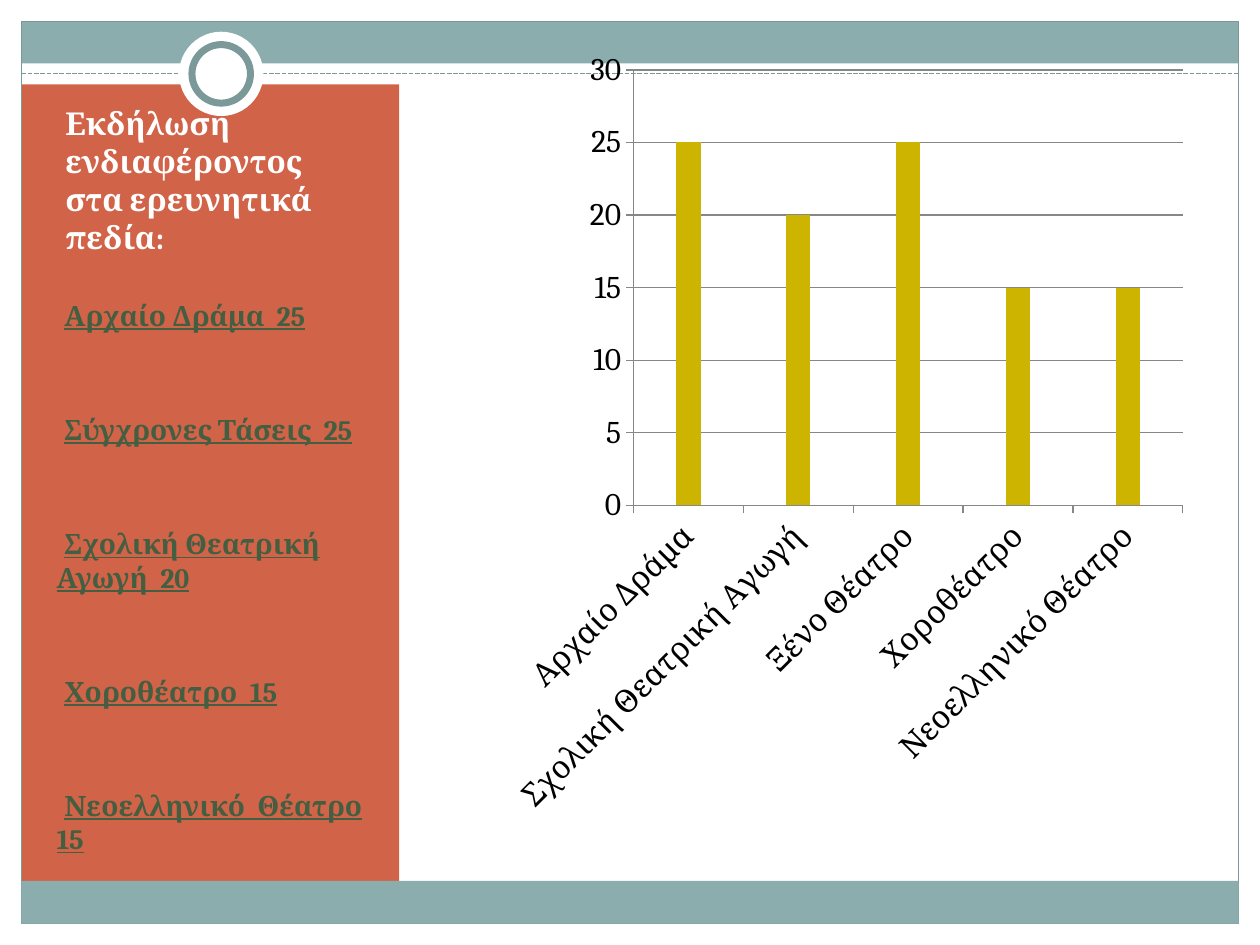
from dataclasses import dataclass

from lxml.etree import SubElement
from pptx import Presentation
from pptx.chart.data import CategoryChartData
from pptx.dml.color import RGBColor
from pptx.enum.chart import XL_CHART_TYPE, XL_TICK_MARK
from pptx.enum.dml import MSO_LINE
from pptx.enum.shapes import MSO_CONNECTOR, MSO_SHAPE
from pptx.enum.text import MSO_ANCHOR
from pptx.oxml import parse_xml
from pptx.oxml.ns import nsdecls, qn
from pptx.util import Cm, Pt


@dataclass(frozen=True)
class Theme:
    font: str = "Cambria"
    white: str = "FFFFFF"
    black: str = "000000"
    teal: str = "8CADAE"
    dark_teal: str = "7C999A"
    rust: str = "D16349"
    gold: str = "CCB400"
    green: str = "435E40"
    grey: str = "878787"
    title_size: int = 18
    item_size: int = 16
    chart_size: int = 18


THEME = Theme()
PAGE_WIDTH, PAGE_HEIGHT = 25.4, 19.05
MARGIN = 0.43
INNER_WIDTH = PAGE_WIDTH - 2 * MARGIN

TITLE = "Εκδήλωση ενδιαφέροντος στα ερευνητικά πεδία:"
FIELDS = [
    "Αρχαίο Δράμα  25",
    "Σύγχρονες Τάσεις  25",
    "Σχολική Θεατρική Αγωγή  20",
    "Χοροθέατρο  15",
    "Νεοελληνικό  Θέατρο 15",
]
CATEGORIES = [
    "Αρχαίο Δράμα",
    "Σχολική Θεατρική Αγωγή",
    "Ξένο Θέατρο",
    "Χοροθέατρο",
    "Νεοελληνικό Θέατρο",
]
VALUES = [25, 20, 25, 15, 15]


def color(value):
    return RGBColor.from_string(value)


def add_panel(page, left, top, width, height, fill=None, line=None,
              weight=0.75, kind=MSO_SHAPE.RECTANGLE):
    panel = page.shapes.add_shape(kind, Cm(left), Cm(top), Cm(width), Cm(height))
    panel.shadow.inherit = False
    if fill:
        panel.fill.solid()
        panel.fill.fore_color.rgb = color(fill)
    else:
        panel.fill.background()
    if line:
        panel.line.color.rgb = color(line)
        panel.line.width = Pt(weight)
    else:
        panel.line.fill.background()


def add_dashed_rule(page, top):
    rule = page.shapes.add_connector(
        MSO_CONNECTOR.STRAIGHT, Cm(MARGIN), Cm(top), Cm(PAGE_WIDTH - MARGIN), Cm(top))
    rule.line.color.rgb = color(THEME.dark_teal)
    rule.line.width = Pt(0.9)
    rule.line.dash_style = MSO_LINE.SQUARE_DOT
    SubElement(rule._element.spPr, qn("a:effectLst"))


def add_text(page, texts, left, top, width, height, *, size, ink,
             underline=False, anchor=MSO_ANCHOR.TOP, gap=0, indent=0):
    box = page.shapes.add_textbox(Cm(left), Cm(top), Cm(width), Cm(height))
    frame = box.text_frame
    frame.word_wrap = True
    frame.vertical_anchor = anchor
    for index, text in enumerate(texts):
        para = frame.add_paragraph() if index else frame.paragraphs[0]
        para.space_after = Pt(gap)
        para._p.get_or_add_pPr().set("indent", str(Cm(indent)))
        span = para.add_run()
        span.text = text
        span.font.name = THEME.font
        span.font.size = Pt(size)
        span.font.bold = True
        span.font.underline = underline
        span.font.color.rgb = color(ink)


def set_plot_area(chart, **fractions):
    area = chart._chartSpace.chart.plotArea
    for old in area.findall(qn("c:layout")):
        area.remove(old)
    parts = "".join(f'<c:{key} val="{value}"/>' for key, value in fractions.items())
    area.insert(0, parse_xml(
        f'<c:layout {nsdecls("c")}><c:manualLayout><c:layoutTarget val="inner"/>'
        f'<c:xMode val="edge"/><c:yMode val="edge"/>{parts}'
        '</c:manualLayout></c:layout>'))


def style_line(line):
    line.color.rgb = color(THEME.grey)
    line.width = Pt(0.75)


def add_interest_chart(page, left, top, width, height):
    blank = [None] * len(VALUES)
    data = CategoryChartData(number_format="General")
    data.categories = CATEGORIES
    for number, values in enumerate([blank, VALUES, blank], start=1):
        data.add_series(f"Series {number}", values)
    chart = page.shapes.add_chart(
        XL_CHART_TYPE.COLUMN_CLUSTERED, Cm(left), Cm(top), Cm(width), Cm(height), data).chart
    chart.has_legend = False
    chart.has_title = False
    chart.font.name = THEME.font
    chart.font.size = Pt(THEME.chart_size)
    chart.font.color.rgb = color(THEME.black)

    # Columns
    plot = chart.plots[0]
    plot.gap_width = 150
    plot.overlap = 0
    plot.vary_by_categories = False
    for series, fill in zip(plot.series, [THEME.rust, THEME.gold, THEME.teal]):
        series.format.fill.solid()
        series.format.fill.fore_color.rgb = color(fill)

    # Axes
    for axis in (chart.category_axis, chart.value_axis):
        axis.major_tick_mark = XL_TICK_MARK.OUTSIDE
        axis.minor_tick_mark = XL_TICK_MARK.NONE
        style_line(axis.format.line)
    labels = chart.category_axis.tick_labels
    labels.font.size = Pt(THEME.chart_size)
    text_body = chart.category_axis._element.find(qn("c:txPr"))
    text_body.find(qn("a:bodyPr")).set("rot", str(-45 * 60000))
    scale = chart.value_axis
    scale.minimum_scale, scale.maximum_scale, scale.major_unit = 0, 30, 5
    scale.has_major_gridlines = True
    style_line(scale.major_gridlines.format.line)
    set_plot_area(chart, x=0.2, y=0.04, w=0.78, h=0.54)


def add_frame(page):
    # Bands, side panel and border
    add_panel(page, MARGIN, MARGIN, INNER_WIDTH, 0.85, fill=THEME.teal)
    add_panel(page, MARGIN, 1.7, 7.62, 16.3, fill=THEME.rust)
    add_panel(page, MARGIN, MARGIN, INNER_WIDTH, 18.19, line=THEME.dark_teal)
    add_dashed_rule(page, 1.48)
    # Ring
    add_panel(page, 3.61, 0.64, 1.7, 1.7, fill=THEME.white, kind=MSO_SHAPE.OVAL)
    add_panel(page, 3.87, 0.9, 1.18, 1.18, fill=THEME.white, line=THEME.dark_teal,
              weight=4, kind=MSO_SHAPE.OVAL)
    # Bottom band
    add_panel(page, MARGIN, 17.76, INNER_WIDTH, 0.86, fill=THEME.teal)


def main():
    deck = Presentation()
    deck.slide_width, deck.slide_height = Cm(PAGE_WIDTH), Cm(PAGE_HEIGHT)
    page = deck.slides.add_slide(deck.slide_layouts[6])
    add_frame(page)
    add_text(page, [TITLE], 1.07, 2.54, 6.55, 2.74, size=THEME.title_size,
             ink=THEME.white, anchor=MSO_ANCHOR.BOTTOM)
    add_interest_chart(page, 9.93, 0.76, 14.2, 16.26)
    add_text(page, FIELDS, 0.89, 5.89, 7.19, 11.76, size=THEME.item_size,
             ink=THEME.green, underline=True, gap=46, indent=0.16)
    deck.save("out.pptx")


if __name__ == "__main__":
    main()
